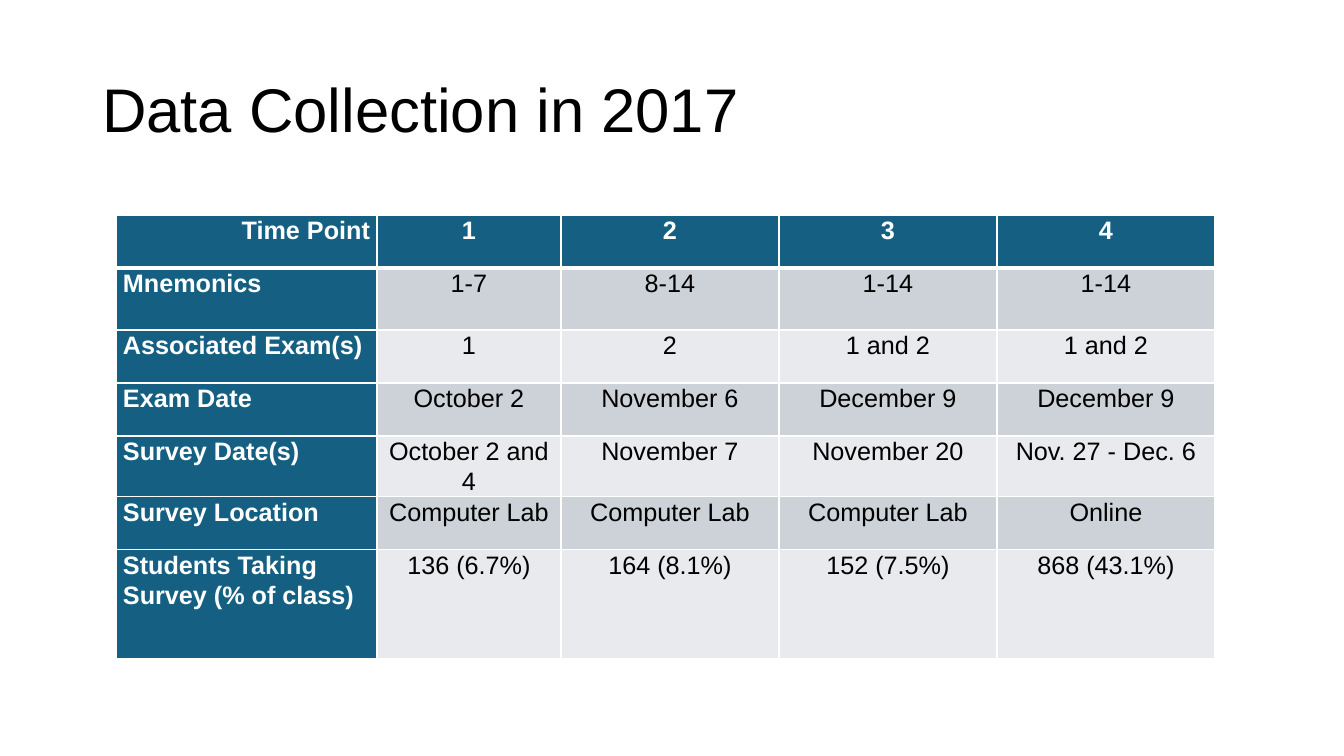
from lxml.etree import SubElement
from pptx import Presentation
from pptx.dml.color import RGBColor
from pptx.enum.text import MSO_ANCHOR, PP_ALIGN
from pptx.oxml.ns import qn
from pptx.util import Emu, Pt

TITLE = "Data Collection in 2017"
ROWS = [
    ("Time Point", "1", "2", "3", "4"),
    ("Mnemonics", "1-7", "8-14", "1-14", "1-14"),
    ("Associated Exam(s)", "1", "2", "1 and 2", "1 and 2"),
    ("Exam Date", "October 2", "November 6", "December 9", "December 9"),
    ("Survey Date(s)", "October 2 and 4", "November 7", "November 20", "Nov. 27 - Dec. 6"),
    ("Survey Location", "Computer Lab", "Computer Lab", "Computer Lab", "Online"),
    ("Students Taking Survey (% of class)", "136 (6.7%)", "164 (8.1%)", "152 (7.5%)", "868 (43.1%)"),
]
COLUMN_WIDTHS = [261, 184, 218, 218, 218]
ROW_HEIGHTS = [53, 62, 53, 53, 53, 53, 109]

FONT = "Arial"
BLACK = RGBColor(0x00, 0x00, 0x00)
WHITE = RGBColor(0xFF, 0xFF, 0xFF)
HEADER_BLUE = RGBColor(0x15, 0x60, 0x82)
BANDS = [RGBColor(0xE8, 0xEA, 0xED), RGBColor(0xCC, 0xD2, 0xD8)]


def px(length):
    return Emu(round(length * 914400 / 100.8))


def write_text(frame, text, size=18, color=BLACK, bold=False, align=PP_ALIGN.CENTER, spacing=1.07):
    paragraph = frame.paragraphs[0]
    paragraph.alignment = align
    paragraph.line_spacing = spacing
    run = paragraph.add_run()
    run.text = text
    run.font.name = FONT
    run.font.size = Pt(size)
    run.font.bold = bold
    run.font.color.rgb = color


def add_borders(cell, **widths):
    properties = cell._tc.get_or_add_tcPr()
    for side, width in widths.items():
        line = SubElement(properties, qn(f"a:ln{side}"), w=str(Pt(width)))
        fill = SubElement(line, qn("a:solidFill"))
        SubElement(fill, qn("a:srgbClr"), val=str(WHITE))


def cell_alignment(row, column):
    if column:
        return PP_ALIGN.CENTER
    if row == 0:
        return PP_ALIGN.RIGHT
    return PP_ALIGN.LEFT if row == len(ROWS) - 1 else PP_ALIGN.JUSTIFY


def add_title(slide):
    title = slide.shapes.title
    title.left, title.top, title.width, title.height = map(px, (92, 40, 1159, 146))
    title.text_frame.vertical_anchor = MSO_ANCHOR.MIDDLE
    write_text(title.text_frame, TITLE, size=44, align=PP_ALIGN.LEFT, spacing=0.9)


def add_schedule(slide):
    table = slide.shapes.add_table(
        len(ROWS), len(COLUMN_WIDTHS), px(116), px(215), px(sum(COLUMN_WIDTHS)), px(sum(ROW_HEIGHTS))
    ).table
    table.first_col = True
    for column, width in zip(table.columns, COLUMN_WIDTHS):
        column.width = px(width)
    for row, height in zip(table.rows, ROW_HEIGHTS):
        row.height = px(height)
    for row, values in enumerate(ROWS):
        for column, text in enumerate(values):
            cell = table.cell(row, column)
            header = row == 0 or column == 0
            cell.margin_left = cell.margin_right = px(7)
            cell.margin_top = cell.margin_bottom = 0
            add_borders(cell, L=1, R=1, T=3 if row == 1 else 1, B=3 if row == 0 else 1)
            cell.fill.solid()
            cell.fill.fore_color.rgb = HEADER_BLUE if header else BANDS[row % 2]
            write_text(
                cell.text_frame,
                text,
                color=WHITE if header else BLACK,
                bold=header,
                align=cell_alignment(row, column),
            )


def main():
    presentation = Presentation()
    presentation.slide_width = px(1344)
    presentation.slide_height = px(756)
    slide = presentation.slides.add_slide(presentation.slide_layouts[5])
    add_title(slide)
    add_schedule(slide)
    presentation.save("out.pptx")


if __name__ == "__main__":
    main()
